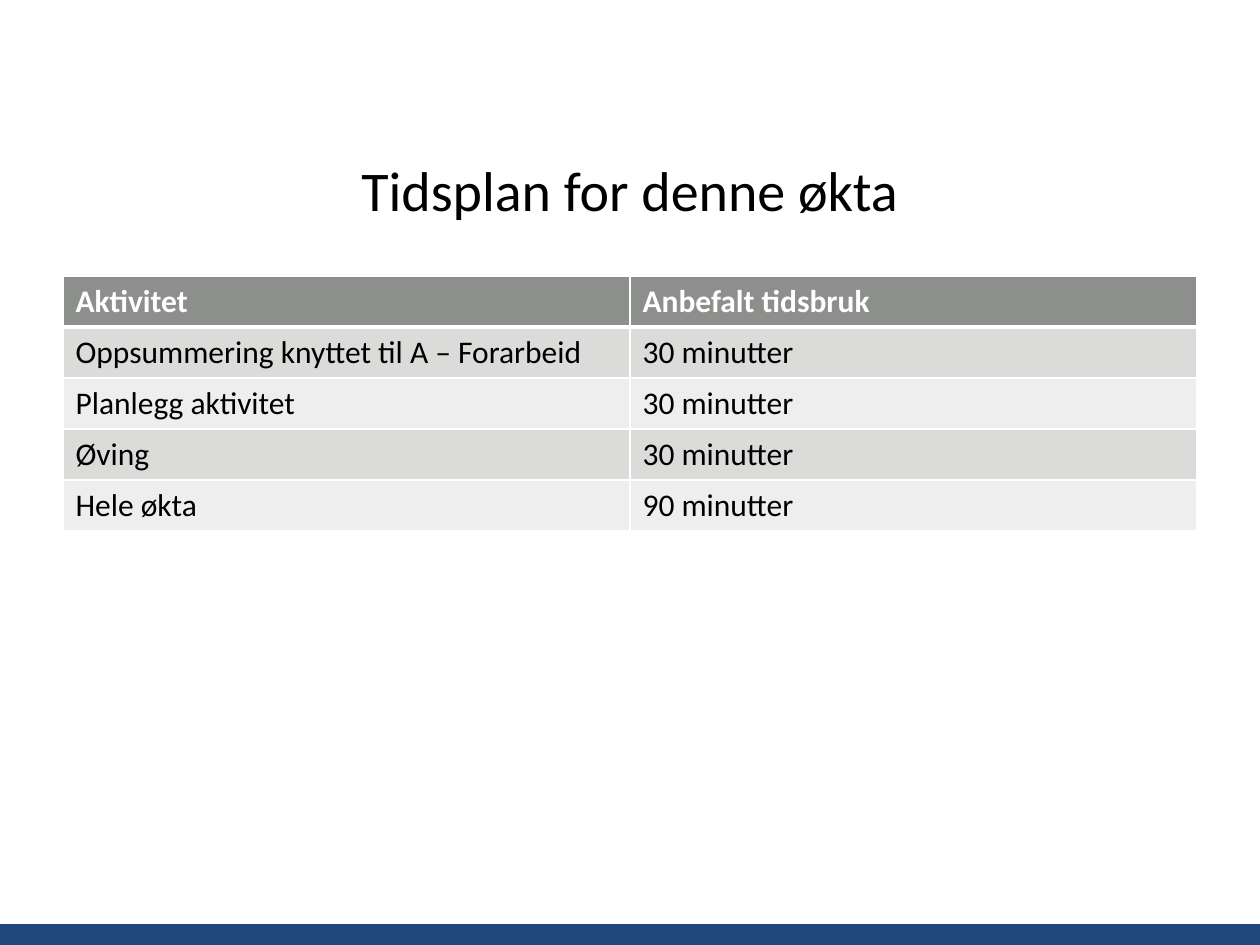
import pptx
import pptx.util
import pptx.dml.color
import pptx.enum.shapes
import pptx.enum.text
import lxml.etree

theme = {
    "face": "Calibri", "title": 32, "body": 18,
    "ink": "000000", "white": "FFFFFF", "bar": "1F487E",
    "head": "8D8F8C", "bands": ["DBDBDA", "EEEEEE"],
}
rows = [
    ("Aktivitet", "Anbefalt tidsbruk"),
    ("Oppsummering knyttet til A – Forarbeid", "30 minutter"),
    ("Planlegg aktivitet", "30 minutter"),
    ("Øving", "30 minutter"),
    ("Hele økta", "90 minutter"),
]


def px(*nums):
    return [round(num * 914400 / 126) for num in nums]


def write(frame, text, size, tint, bold=False):
    para = frame.paragraphs[0]
    run = para.add_run()
    run.text = text
    form = {"name": theme["face"], "size": pptx.util.Pt(size), "bold": bold}
    for key, val in form.items():
        setattr(run.font, key, val)
    run.font.color.rgb = pptx.dml.color.RGBColor.from_string(tint)
    return para


deck = pptx.Presentation()
deck.slide_width, deck.slide_height = px(1260, 945)
slide = deck.slides.add_slide(deck.slide_layouts[6])

bar = slide.shapes.add_shape(pptx.enum.shapes.MSO_SHAPE.RECTANGLE, *px(0, 924, 1260, 21))
bar.shadow.inherit = False
bar.fill.solid()
bar.fill.fore_color.rgb = pptx.dml.color.RGBColor.from_string(theme["bar"])
bar.line.fill.background()

title = slide.shapes.add_textbox(*px(63, 126, 1134, 127)).text_frame
form = {"word_wrap": True, "vertical_anchor": pptx.enum.text.MSO_ANCHOR.MIDDLE}
for key, val in form.items():
    setattr(title, key, val)
para = write(title, "Tidsplan for denne økta", theme["title"], theme["ink"])
para.alignment = pptx.enum.text.PP_ALIGN.CENTER

table = slide.shapes.add_table(len(rows), 2, *px(63, 276, 1134, 255)).table
for col in table.columns:
    col.width = px(567)[0]
for num, row in enumerate(rows):
    table.rows[num].height = px(51)[0]
    head = num == 0
    fill = theme["head"] if head else theme["bands"][(num - 1) % 2]
    tint = theme["white"] if head else theme["ink"]
    for pos, text in enumerate(row):
        cell = table.cell(num, pos)
        write(cell.text_frame, text, theme["body"], tint, head)
        props = cell._tc.get_or_add_tcPr()
        for side in "LRTB":
            thick = (side == "B" and head) or (side == "T" and num == 1)
            line = lxml.etree.SubElement(props, pptx.oxml.ns.qn("a:ln" + side))
            line.set("w", str(pptx.util.Pt(3 if thick else 1)))
            paint = lxml.etree.SubElement(line, pptx.oxml.ns.qn("a:solidFill"))
            shade = lxml.etree.SubElement(paint, pptx.oxml.ns.qn("a:srgbClr"))
            shade.set("val", theme["white"])
        cell.fill.solid()
        cell.fill.fore_color.rgb = pptx.dml.color.RGBColor.from_string(fill)

deck.save("out.pptx")
